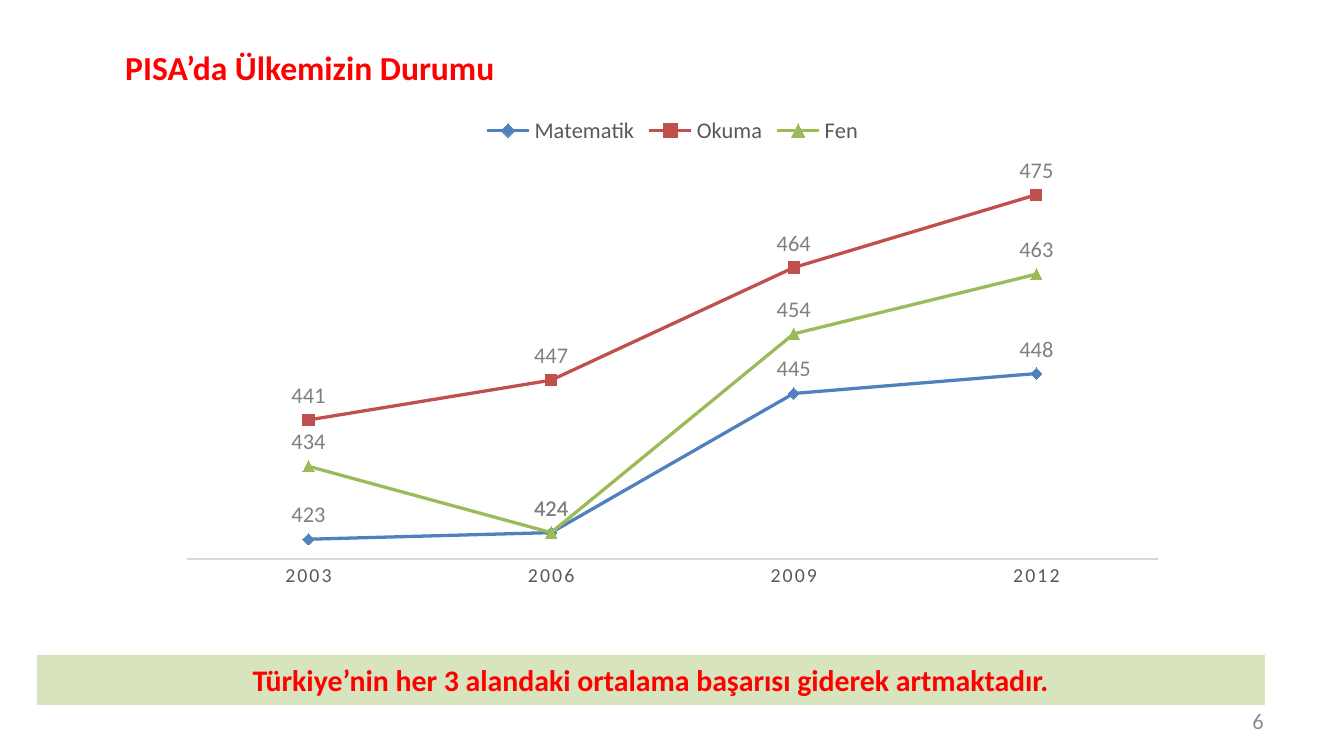
import dataclasses

import lxml.etree
import pptx
import pptx.chart.data
import pptx.dml.color
import pptx.enum.chart
import pptx.enum.shapes
import pptx.enum.text
import pptx.oxml.ns
import pptx.util

ALIGN = pptx.enum.text.PP_ALIGN
ANCHOR = pptx.enum.text.MSO_ANCHOR
MARKER = pptx.enum.chart.XL_MARKER_STYLE

EMU_PER_PX = 914400 / 134.4
PAGE_WIDTH, PAGE_HEIGHT = 1344, 756

YEARS = ["2003", "2006", "2009", "2012"]
SCORES = [
    ("Matematik", [423, 424, 445, 448], "4F81BD", MARKER.DIAMOND),
    ("Okuma", [441, 447, 464, 475], "C0504D", MARKER.SQUARE),
    ("Fen", [434, 424, 454, 463], "9BBB59", MARKER.TRIANGLE),
]


@dataclasses.dataclass(frozen=True)
class Theme:
    font: str = "Calibri"
    accent: str = "FF0000"
    band: str = "D7E4BD"
    axis_text: str = "595959"
    label_text: str = "808080"
    page_text: str = "8C8C8C"
    axis_line: str = "D9D9D9"
    title_size: float = 18
    message_size: float = 16
    small_size: float = 12
    axis_size: float = 10.6


THEME = Theme()


def px(length):
    return pptx.util.Emu(round(length * EMU_PER_PX))


def rgb(code):
    return pptx.dml.color.RGBColor.from_string(code)


def style_font(font, size, color, bold=False):
    font.name = THEME.font
    font.size = pptx.util.Pt(size)
    font.color.rgb = rgb(color)
    font.bold = bold


def write_line(shape, text, size, color, bold=False, align=ALIGN.LEFT,
               anchor=ANCHOR.TOP, wrap=True):
    frame = shape.text_frame
    frame.word_wrap = wrap
    frame.vertical_anchor = anchor
    para = frame.paragraphs[0]
    para.alignment = align
    span = para.add_run()
    span.text = text
    style_font(span.font, size, color, bold)


def add_title(page, box):
    shape = page.shapes.add_textbox(*map(px, box))
    write_line(shape, "PISA’da Ülkemizin Durumu", THEME.title_size,
               THEME.accent, bold=True, wrap=False)


def add_message_band(page, box):
    shape = page.shapes.add_shape(
        pptx.enum.shapes.MSO_SHAPE.RECTANGLE, *map(px, box))
    shape.shadow.inherit = False
    shape.fill.solid()
    shape.fill.fore_color.rgb = rgb(THEME.band)
    shape.line.fill.background()
    write_line(shape,
               "Türkiye’nin her 3 alandaki ortalama başarısı giderek artmaktadır.",
               THEME.message_size, THEME.accent, bold=True, align=ALIGN.CENTER)


def add_page_number(page, box):
    shape = page.shapes.add_textbox(*map(px, box))
    write_line(shape, "6", THEME.small_size, THEME.page_text,
               align=ALIGN.RIGHT, anchor=ANCHOR.MIDDLE)


def fix_plot_area(chart, fractions):
    """Pin the inner plot area to x, y, w, h fractions of the chart."""
    qn = pptx.oxml.ns.qn
    plot_area = chart.element.find(".//" + qn("c:plotArea"))
    for old in plot_area.findall(qn("c:layout")):
        plot_area.remove(old)
    layout = lxml.etree.Element(qn("c:layout"))
    manual = lxml.etree.SubElement(layout, qn("c:manualLayout"))
    settings = [("layoutTarget", "inner"), ("xMode", "edge"), ("yMode", "edge")]
    settings += zip("xywh", map(str, fractions))
    for name, value in settings:
        lxml.etree.SubElement(manual, qn("c:" + name)).set("val", value)
    plot_area.insert(0, layout)


def style_axes(chart):
    years = chart.category_axis
    years.major_tick_mark = pptx.enum.chart.XL_TICK_MARK.NONE
    years.has_major_gridlines = False
    years.format.line.color.rgb = rgb(THEME.axis_line)
    years.format.line.width = pptx.util.Pt(0.75)
    style_font(years.tick_labels.font, THEME.axis_size, THEME.axis_text)
    for props in chart.element.xpath(".//c:catAx//a:defRPr"):
        props.set("spc", "120")

    scores = chart.value_axis
    scores.minimum_scale, scores.maximum_scale = 420, 480
    scores.has_major_gridlines = False
    scores.visible = False


def style_series(series, color, marker):
    series.smooth = False
    series.format.line.color.rgb = rgb(color)
    series.format.line.width = pptx.util.Pt(1.75)
    series.marker.style = marker
    series.marker.size = 6
    series.marker.format.fill.solid()
    series.marker.format.fill.fore_color.rgb = rgb(color)
    series.marker.format.line.color.rgb = rgb(color)
    labels = series.data_labels
    labels.show_value = True
    labels.position = pptx.enum.chart.XL_LABEL_POSITION.ABOVE
    style_font(labels.font, THEME.small_size, THEME.label_text)


def add_score_chart(page, box):
    data = pptx.chart.data.CategoryChartData()
    data.categories = YEARS
    for name, values, _, _ in SCORES:
        data.add_series(name, values)
    chart = page.shapes.add_chart(
        pptx.enum.chart.XL_CHART_TYPE.LINE_MARKERS, *map(px, box), data).chart
    chart.has_title = False
    style_font(chart.font, 10, "000000")
    chart.has_legend = True
    chart.legend.position = pptx.enum.chart.XL_LEGEND_POSITION.TOP
    chart.legend.include_in_layout = False
    style_font(chart.legend.font, THEME.small_size, THEME.axis_text)
    style_axes(chart)
    plot = chart.plots[0]
    plot.vary_by_categories = False
    for series, (_, _, color, marker) in zip(plot.series, SCORES):
        style_series(series, color, marker)
    fix_plot_area(chart, (0.02, 0.12, 0.96, 0.8))


def main():
    deck = pptx.Presentation()
    deck.slide_width, deck.slide_height = px(PAGE_WIDTH), px(PAGE_HEIGHT)
    page = deck.slides.add_slide(deck.slide_layouts[6])
    add_title(page, (112, 40, 399, 54))
    add_message_band(page, (37, 655, 1228, 50))
    add_score_chart(page, (167, 102, 1011, 497))
    add_page_number(page, (964, 701, 313, 40))
    deck.save("out.pptx")


if __name__ == "__main__":
    main()
